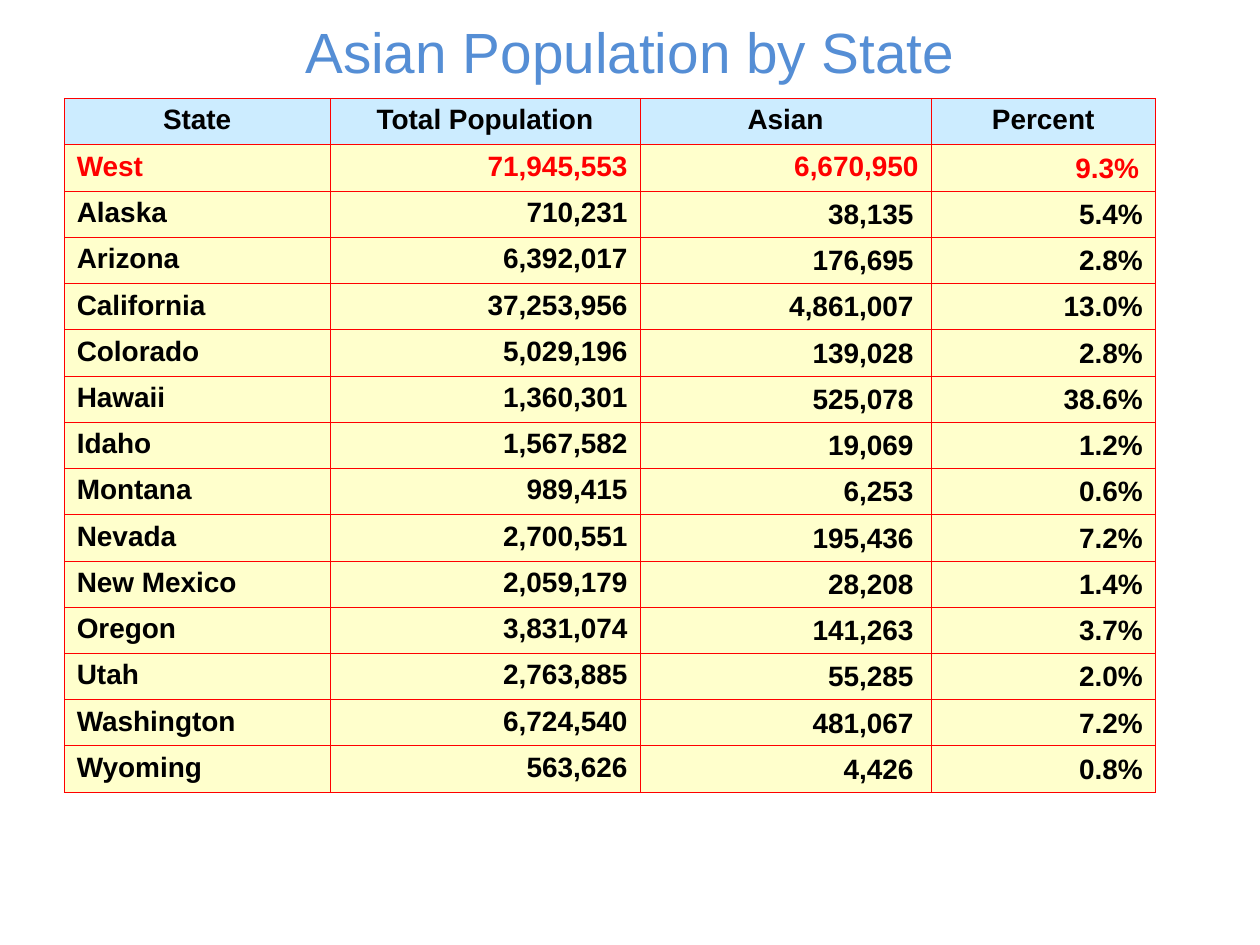
from typing import NamedTuple

from lxml import etree
from pptx import Presentation
from pptx import util as u
from pptx.dml.color import RGBColor
from pptx.enum import text
from pptx.oxml import ns

RED, BLACK = "FF0000", "000000"
LEFT, MID, RIGHT = text.PP_ALIGN.LEFT, text.PP_ALIGN.CENTER, text.PP_ALIGN.RIGHT
COLS = [2.11, 2.46, 2.31, 1.78]
HEAD, TIGHT, TALL = 0.37, 0.35, 5.44


class Row(NamedTuple):
    state: str
    total: str
    asian: str
    share: str


HEADS = Row("State", "Total Population", "Asian", "Percent")
ROWS = [
    Row("West", "71,945,553", "6,670,950", "9.3%"),
    Row("Alaska", "710,231", "38,135", "5.4%"),
    Row("Arizona", "6,392,017", "176,695", "2.8%"),
    Row("California", "37,253,956", "4,861,007", "13.0%"),
    Row("Colorado", "5,029,196", "139,028", "2.8%"),
    Row("Hawaii", "1,360,301", "525,078", "38.6%"),
    Row("Idaho", "1,567,582", "19,069", "1.2%"),
    Row("Montana", "989,415", "6,253", "0.6%"),
    Row("Nevada", "2,700,551", "195,436", "7.2%"),
    Row("New Mexico", "2,059,179", "28,208", "1.4%"),
    Row("Oregon", "3,831,074", "141,263", "3.7%"),
    Row("Utah", "2,763,885", "55,285", "2.0%"),
    Row("Washington", "6,724,540", "481,067", "7.2%"),
    Row("Wyoming", "563,626", "4,426", "0.8%"),
]


def color(code: str) -> RGBColor:
    return RGBColor.from_string(code)


def write(frame, words: str, *, size: float = 16, ink: str = BLACK,
          bold: bool = False, align=LEFT) -> None:
    para = frame.paragraphs[0]
    para.alignment = align
    run = para.add_run()
    run.text = words
    font = run.font
    font.name, font.size, font.bold = "Arial", u.Pt(size), bold
    font.color.rgb = color(ink)


def border(cell, ink: str = RED, width: float = 0.5) -> None:
    """Rule all four sides; call before filling, as lines precede the fill."""
    props = cell._tc.get_or_add_tcPr()
    for side in ("lnL", "lnR", "lnT", "lnB"):
        line = etree.SubElement(props, ns.qn(f"a:{side}"), w=str(u.Pt(width)))
        solid = etree.SubElement(line, ns.qn("a:solidFill"))
        etree.SubElement(solid, ns.qn("a:srgbClr"), val=ink)


def paint(cell, words: str, fill: str, **form) -> None:
    border(cell)
    cell.fill.solid()
    cell.fill.fore_color.rgb = color(fill)
    write(cell.text_frame, words, bold=True, **form)


def place(cell, col: int, west: bool) -> None:
    """Set the anchor and right inset of an Asian or Percent figure."""
    if col == 3 or not west:
        cell.vertical_anchor = text.MSO_ANCHOR.MIDDLE
        cell.margin_top, cell.margin_bottom = u.Inches(0.01), u.Inches(0)
    if col == 2 and not west:
        cell.margin_right = u.Inches(0.14)
    elif col == 3 and west:
        cell.margin_right = u.Inches(0.13)


def draw_title(slide) -> None:
    box = slide.shapes.add_textbox(
        u.Inches(0), u.Inches(0.23), u.Inches(10), u.Inches(0.34))
    frame = box.text_frame
    frame.word_wrap = True
    frame.vertical_anchor = text.MSO_ANCHOR.MIDDLE
    write(frame, "Asian Population by State", size=32.4, ink="558ED5", align=MID)


def draw_table(slide) -> None:
    table = slide.shapes.add_table(
        len(ROWS) + 1, len(COLS), u.Inches(0.51), u.Inches(0.78),
        u.Inches(sum(COLS)), u.Inches(TALL)).table
    table.first_row = table.horz_banding = False
    for col, width in zip(table.columns, COLS):
        col.width = u.Inches(width)

    tight = {"Utah", "Washington"}
    even = (TALL - HEAD - TIGHT * len(tight)) / (len(ROWS) - len(tight))
    table.rows[0].height = u.Inches(HEAD)
    for col, words in enumerate(HEADS):
        paint(table.cell(0, col), words, "CCECFF", align=MID)

    for at, row in enumerate(ROWS, 1):
        table.rows[at].height = u.Inches(TIGHT if row.state in tight else even)
        west = row.state == "West"
        for col, words in enumerate(row):
            cell = table.cell(at, col)
            paint(cell, words, "FFFFCC", ink=RED if west else BLACK,
                  align=RIGHT if col else LEFT)
            if col > 1:
                place(cell, col, west)


def main() -> None:
    deck = Presentation()
    deck.slide_width, deck.slide_height = u.Inches(10), u.Inches(7.5)
    slide = deck.slides.add_slide(deck.slide_layouts[6])
    draw_title(slide)
    draw_table(slide)
    deck.save("out.pptx")


if __name__ == "__main__":
    main()
